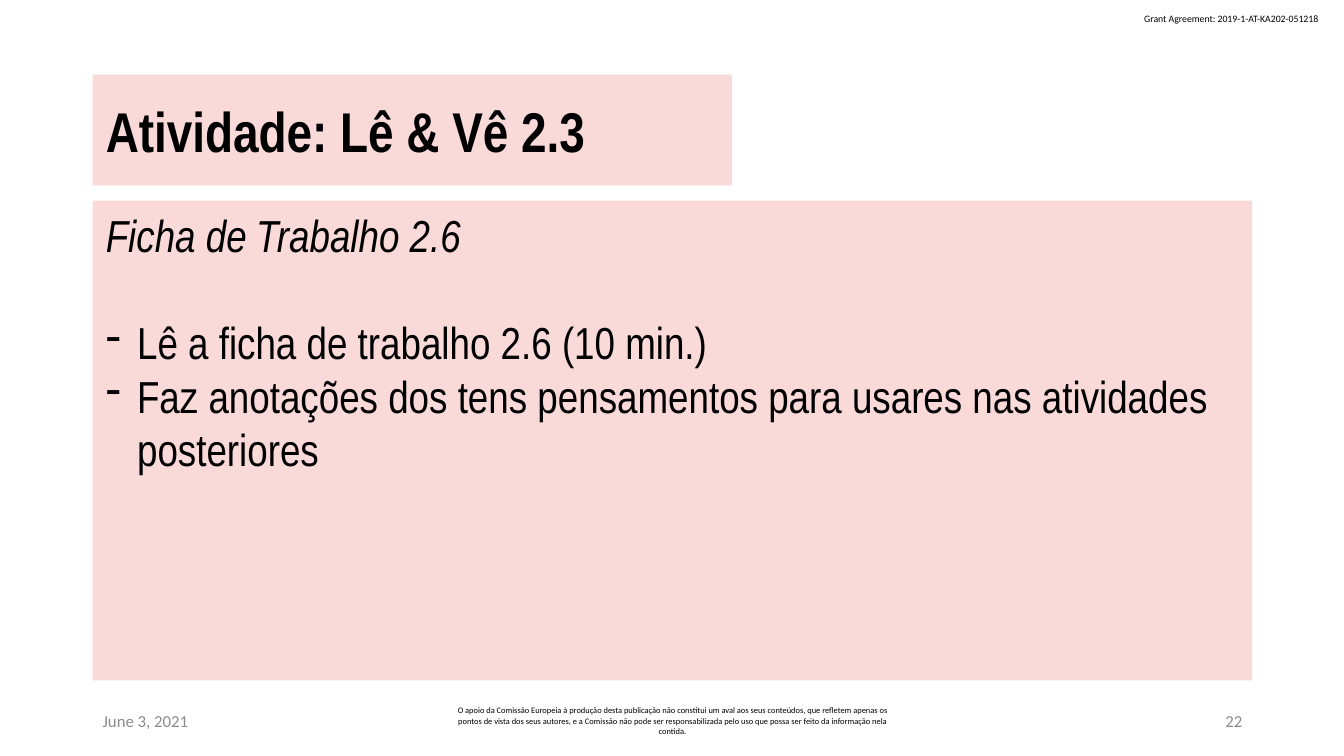
"""Build the reading activity slide with its title, instructions and footer."""
import pptx
import pptx.dml.color
import pptx.enum.shapes
import pptx.enum.text
import pptx.oxml
import pptx.oxml.ns
import pptx.util

EMU_PER_PX = 9144
PINK = "F9DAD9"
BLACK = "000000"
GREY = "8C8C8C"
BODY_FONT = "Arial Narrow"
FOOTER_FONT = "Calibri"
LEFT = 92
FOOTER_TOP, FOOTER_HEIGHT = 695, 40
ALIGN = pptx.enum.text.PP_ALIGN
ANCHOR = pptx.enum.text.MSO_ANCHOR


def px(length):
    return pptx.util.Emu(length * EMU_PER_PX)


def rgb(color):
    return pptx.dml.color.RGBColor.from_string(color)


def set_margins(frame, horizontal, vertical):
    frame.margin_left = frame.margin_right = px(horizontal)
    frame.margin_top = frame.margin_bottom = px(vertical)


def add_dash(paragraph, indent):
    properties = paragraph._p.get_or_add_pPr()
    properties.set("marL", str(px(indent)))
    properties.set("indent", str(px(-indent)))
    namespace = pptx.oxml.ns.nsdecls("a")
    properties.append(pptx.oxml.parse_xml(f'<a:buFontTx {namespace}/>'))
    properties.append(pptx.oxml.parse_xml(f'<a:buChar {namespace} char="-"/>'))


def write(paragraph, text, size, font=BODY_FONT, color=BLACK, bold=False,
          italic=False, align=ALIGN.LEFT, space_before=0, dash=False):
    paragraph.alignment = align
    paragraph.space_before = pptx.util.Pt(space_before)
    if dash:
        add_dash(paragraph, 31)
    run = paragraph.add_run()
    run.text = text
    run.font.name = font
    run.font.size = pptx.util.Pt(size)
    run.font.bold = bold
    run.font.italic = italic
    run.font.color.rgb = rgb(color)


def add_label(slide, box, text, size, wrap=True, anchor=ANCHOR.MIDDLE, **style):
    frame = slide.shapes.add_textbox(*map(px, box)).text_frame
    frame.word_wrap = wrap
    frame.vertical_anchor = anchor
    set_margins(frame, 10, 5)
    write(frame.paragraphs[0], text, size, font=FOOTER_FONT, **style)


def add_panel(slide, box, anchor):
    shape = slide.shapes.add_shape(
        pptx.enum.shapes.MSO_SHAPE.RECTANGLE, *map(px, box))
    shape.shadow.inherit = False
    shape.fill.solid()
    shape.fill.fore_color.rgb = rgb(PINK)
    shape.line.fill.background()
    frame = shape.text_frame
    frame.word_wrap = True
    frame.vertical_anchor = anchor
    set_margins(frame, 13, 7)
    return frame


def add_footer(slide):
    add_label(slide, (LEFT, FOOTER_TOP, 300, FOOTER_HEIGHT), "June 3, 2021", 12,
              color=GREY)
    add_label(slide, (442, FOOTER_TOP, 450, FOOTER_HEIGHT),
              "O apoio da Comissão Europeia à produção desta publicação não "
              "constitui um aval aos seus conteúdos, que refletem apenas os "
              "pontos de vista dos seus autores, e a Comissão não pode ser "
              "responsabilizada pelo uso que possa ser feito da informação "
              "nela contida.", 6, align=ALIGN.CENTER)
    add_label(slide, (942, FOOTER_TOP, 300, FOOTER_HEIGHT), "22", 12,
              color=GREY, align=ALIGN.RIGHT)


def add_instructions(slide):
    frame = add_panel(slide, (LEFT, 199, 1150, 476), ANCHOR.TOP)
    write(frame.paragraphs[0], "Ficha de Trabalho 2.6", 32, italic=True)
    write(frame.add_paragraph(), "Lê a ficha de trabalho 2.6 (10 min.)", 32,
          space_before=38, dash=True)
    write(frame.add_paragraph(),
          "Faz anotações dos tens pensamentos para usares nas atividades "
          "posteriores", 32, dash=True)


def main():
    presentation = pptx.Presentation()
    presentation.slide_width = px(1333)
    presentation.slide_height = px(750)
    slide = presentation.slides.add_slide(presentation.slide_layouts[6])
    add_label(slide, (1125, 8, 197, 22),
              "Grant Agreement: 2019-1-AT-KA202-051218", 7,
              wrap=False, anchor=ANCHOR.TOP)
    add_footer(slide)
    title = add_panel(slide, (LEFT, 74, 634, 110), ANCHOR.MIDDLE)
    write(title.paragraphs[0], "Atividade: Lê & Vê 2.3", 40, bold=True)
    add_instructions(slide)
    presentation.save("out.pptx")


if __name__ == "__main__":
    main()
